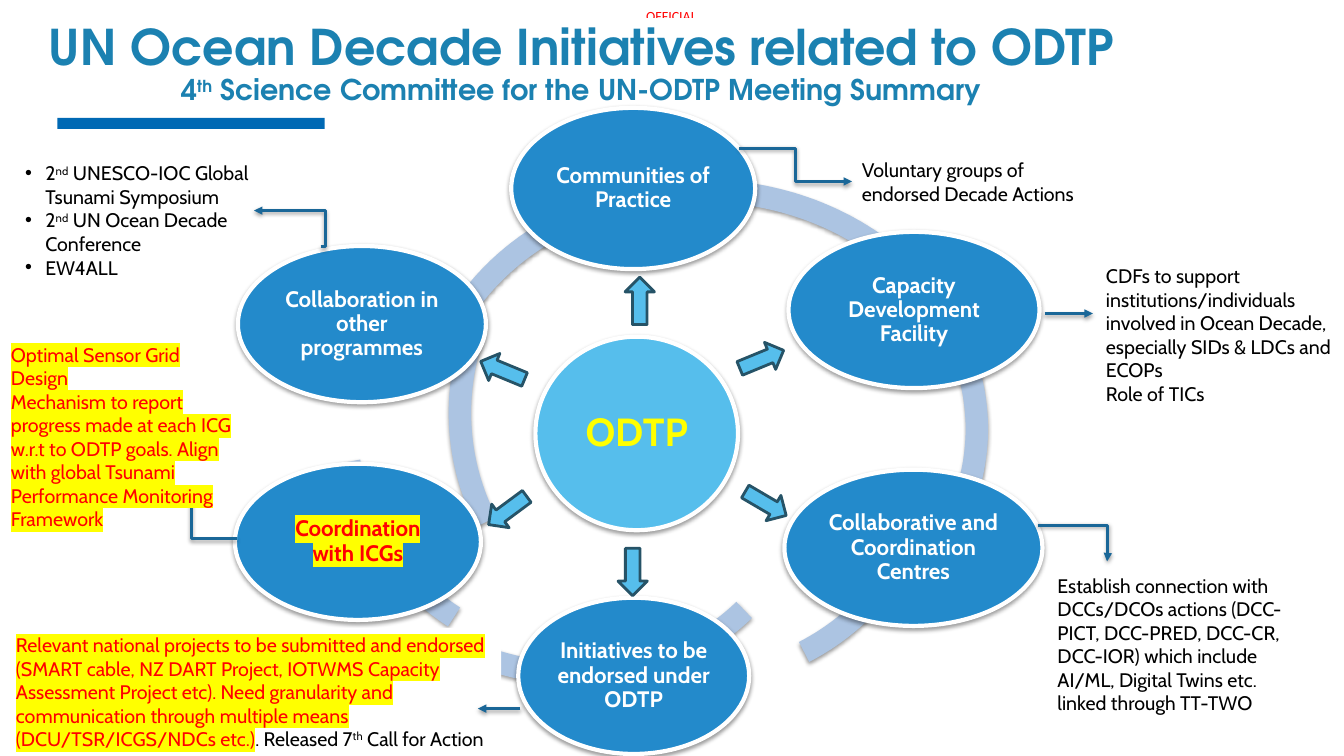
from lxml import etree
from pptx import Presentation
from pptx.dml.color import RGBColor
from pptx.enum.shapes import MSO_CONNECTOR, MSO_SHAPE
from pptx.enum.text import MSO_ANCHOR, MSO_AUTO_SIZE, PP_ALIGN
from pptx.oxml.ns import qn
from pptx.util import Inches, Pt

RECT, OVAL = MSO_SHAPE.RECTANGLE, MSO_SHAPE.OVAL
ARC, DOWN_ARROW = MSO_SHAPE.BLOCK_ARC, MSO_SHAPE.DOWN_ARROW
STRAIGHT, ELBOW = MSO_CONNECTOR.STRAIGHT, MSO_CONNECTOR.ELBOW
TOP, MIDDLE = MSO_ANCHOR.TOP, MSO_ANCHOR.MIDDLE
LEFT, CENTER = PP_ALIGN.LEFT, PP_ALIGN.CENTER
NO_FIT = MSO_AUTO_SIZE.NONE

BODY = dict(name="Cabin", size=Pt(14), bold=False, color="000000")
MARKED = dict(BODY, color="FF0000", highlight="FFFF00")
NODE = dict(BODY, size=Pt(16), bold=True, color="FFFFFF")
NODE_MARKED = dict(NODE, color="FF0000", highlight="FFFF00")
HUB = dict(NODE, size=Pt(28), color="FFFF00")
TITLE = dict(name="TeX Gyre Adventor", size=Pt(35.1), bold=True, color="1B81B1")
SUBTITLE = dict(TITLE, size=Pt(20.4))
OFFICIAL = dict(name="Calibri", size=Pt(10), color="FF0000")


def rgb(value):
    return RGBColor.from_string(value)


def sub(parent, tag, **attrs):
    return etree.SubElement(parent, qn(tag), attrs)


class Deck:
    """Draws styled elements on the current slide."""

    def __init__(self):
        self.prs = Presentation()
        self.prs.slide_width, self.prs.slide_height = Inches(13.33), Inches(7.5)
        self.s = self.prs.slides.add_slide(self.prs.slide_layouts[1])

    def place(self, sp, box):
        for key, value in zip(("left", "top", "width", "height"), box):
            setattr(sp, key, Inches(value))

    def add_run(self, p, text, style, raised):
        r = p.add_run()
        r.text = text
        for key, value in style.items():
            if key == "color":
                r.font.color.rgb = rgb(value)
            elif key != "highlight":
                setattr(r.font, key, value)
        rPr = r._r.get_or_add_rPr()
        if raised:
            rPr.set("baseline", "30000")
        if "highlight" in style:
            mark = sub(rPr, "a:highlight")
            sub(mark, "a:srgbClr", val=style["highlight"])
            rPr.find(qn("a:solidFill")).addnext(mark)

    def fill_text(self, sp, paras, align=LEFT, anchor=TOP, spacing=1.0, inset=(0.1, 0.05)):
        """Fill a shape; each paragraph lists (text, style), with ^ around superscripts."""
        tf = sp.text_frame
        x, y = map(Inches, inset)
        frame = dict(word_wrap=True, auto_size=NO_FIT, vertical_anchor=anchor,
                     margin_left=x, margin_right=x, margin_top=y, margin_bottom=y)
        for key, value in frame.items():
            setattr(tf, key, value)
        layout = dict(alignment=align, line_spacing=spacing, space_before=Pt(0), space_after=Pt(0))
        for i, runs in enumerate(paras):
            p = tf.add_paragraph() if i else tf.paragraphs[0]
            for key, value in layout.items():
                setattr(p, key, value)
            for text, style in runs:
                for j, part in enumerate(text.split("^")):
                    self.add_run(p, part, style, j % 2 == 1)

    def title(self, box, paras):
        sp = self.s.shapes.title
        self.s.shapes._spTree.append(sp._element)
        self.place(sp, box)
        sp.fill.solid()
        sp.fill.fore_color.rgb = rgb("FFFFFF")
        self.fill_text(sp, paras, CENTER, MIDDLE, 0.9, (0.05, 0.05))

    def bullets(self, box, items):
        sp = self.s.placeholders[1]
        self.place(sp, box)
        self.fill_text(sp, [[(item, BODY)] for item in items])
        for p in sp.text_frame.paragraphs:
            pPr = p._p.get_or_add_pPr()
            pPr.set("marL", str(Inches(0.2)))
            pPr.set("indent", str(-Inches(0.2)))
            sub(pPr, "a:buFont", typeface="Arial")
            sub(pPr, "a:buChar", char="•")

    def text(self, box, paras, **layout):
        sp = self.s.shapes.add_textbox(*map(Inches, box))
        self.fill_text(sp, paras, **layout)

    def shape(self, kind, box, fill, line=None, width=2, shadow=False, rotation=0):
        sp = self.s.shapes.add_shape(kind, *map(Inches, box))
        sp.rotation = rotation
        sp.fill.solid()
        sp.fill.fore_color.rgb = rgb(fill)
        if line:
            sp.line.color.rgb = rgb(line)
            sp.line.width = Pt(width)
        else:
            sp.line.fill.background()
        sp.shadow.inherit = False
        if shadow:
            self.shadow(sp._element.spPr.find(qn("a:effectLst")))
        return sp

    def shadow(self, effects):
        shade = sub(effects, "a:outerShdw", blurRad=str(Pt(3.1)), dist=str(Pt(1.6)),
                    dir="5400000", rotWithShape="0")
        sub(sub(shade, "a:srgbClr", val="000000"), "a:alpha", val="38000")

    def arc(self, box, start, end):
        sp = self.shape(ARC, box, "ACC4E2", shadow=True)
        for i, value in enumerate((start * 0.6, end * 0.6, 0.045)):
            sp.adjustments[i] = value

    def oval(self, box, text, style=NODE, fill="238ACB"):
        sp = self.shape(OVAL, box, fill, "FFFFFF", 3, shadow=True)
        self.fill_text(sp, [[(text, style)]], CENTER, MIDDLE, 0.9, (0.02, 0.02))

    def arrow(self, ends, bend=None):
        kind = STRAIGHT if bend is None else ELBOW
        c = self.s.shapes.add_connector(kind, *map(Inches, ends))
        c.line.color.rgb = rgb("1A6798")
        c.line.width = Pt(2)
        spPr = c._element.spPr
        sub(spPr.find(qn("a:ln")), "a:tailEnd", type="triangle")
        self.shadow(sub(spPr, "a:effectLst"))
        if bend is not None:
            guides = spPr.find(qn("a:prstGeom")).find(qn("a:avLst"))
            sub(guides, "a:gd", name="adj1", fmla=f"val {round(bend * 100000)}")


def main():
    d = Deck()
    d.shape(RECT, (0.57, 1.17, 2.65, 0.11), "0069B4")
    d.text((6.41, 0.07, 0.53, 0.17), [[("OFFICIAL", OFFICIAL)]], inset=(0, 0))
    d.title((0.18, 0.18, 11.17, 0.93), [
        [("UN Ocean Decade Initiatives related to ODTP", TITLE)],
        [("4^th^ Science Committee for the UN-ODTP Meeting Summary", SUBTITLE)]])

    for box, start, end in [
            ((3.31, 1.66, 4.95, 4.95), 122.84, 169.14),
            ((2.97, 1.86, 5.74, 4.95), 92.74, 124.44),
            ((3.27, 1.87, 4.95, 4.95), 46.22, 92.93),
            ((4.42, 1.89, 4.95, 4.95), 15.84, 62.81),
            ((4.12, 1.78, 5.68, 4.95), 198.51, 17.61),
            ((4.45, 1.62, 4.95, 4.95), 152.78, 199.4)]:
        d.arc(box, start, end)

    d.oval((5.31, 3.34, 2.01, 1.92), "ODTP", HUB, "56BEEC")
    for box, text, style in [
            ((5.07, 1.07, 2.42, 1.6), "Communities of Practice", NODE),
            ((7.82, 2.3, 2.49, 1.55), "Capacity Development Facility", NODE),
            ((7.78, 4.66, 2.56, 1.55), "Collaborative and Coordination Centres", NODE),
            ((5.14, 5.93, 2.29, 1.55), "Initiatives to be endorsed under ODTP", NODE),
            ((2.33, 4.6, 2.44, 1.55), "Coordination with ICGs", NODE_MARKED),
            ((2.36, 2.44, 2.46, 1.55), "Collaboration in other programmes", NODE)]:
        d.oval(box, text, style)

    d.shape(RECT, (0.06, 6.23, 4.91, 1.28), "FFFFFF")
    for ends, bend in [
            ((10.36, 3.11, 10.84, 3.11), None),
            ((5.16, 7.03, 4.74, 7.03), None),
            ((2.35, 5.34, 1.45, 4.88), 0.5),
            ((10.29, 5.21, 10.98, 5.57), 1.01),
            ((7.33, 1.47, 8.45, 1.8), 0.5),
            ((3.18, 2.45, 2.52, 2.09), -0.07)]:
        d.arrow(ends, bend)

    d.bullets((0.15, 1.55, 2.59, 1.28), [
        "2^nd^ UNESCO-IOC Global Tsunami Symposium",
        "2^nd^ UN Ocean Decade Conference", "EW4ALL"])
    for box, paras in [
            ((8.45, 1.52, 2.45, 0.57), [[("Voluntary groups of endorsed Decade Actions", BODY)]]),
            ((10.87, 2.57, 2.45, 1.51), [
                [("CDFs to support institutions/individuals involved in Ocean Decade, "
                  "especially SIDs & LDCs and ECOPs", BODY)],
                [("Role of TICs", BODY)]]),
            ((10.39, 5.64, 2.57, 1.51), [
                [("Establish connection with DCCs/DCOs actions (DCC-PICT, DCC-PRED, DCC-CR, "
                  "DCC-IOR) which include AI/ML, Digital Twins etc. linked through TT-TWO", BODY)]]),
            ((0.06, 6.23, 4.91, 1.28), [
                [("Relevant national projects to be submitted and endorsed (SMART cable, NZ DART "
                  "Project, IOTWMS Capacity Assessment Project etc). Need granularity and "
                  "communication through multiple means (DCU/TSR/ICGS/NDCs etc.)", MARKED),
                 (". Released 7^th^ Call for Action", BODY)]]),
            ((0.01, 3.35, 2.45, 1.75), [
                [("Optimal Sensor Grid Design", MARKED)],
                [("Mechanism to report progress made at each ICG w.r.t to ODTP goals. Align with "
                  "global Tsunami Performance Monitoring Framework", MARKED)]])]:
        d.text(box, paras)

    for left, top, rotation in [(7.41, 3.33, 247.6), (7.45, 4.76, 300.4), (6.2, 2.75, 180),
                                (4.84, 3.44, 112.5), (4.89, 4.83, 53.5), (6.13, 5.44, 0)]:
        d.shape(DOWN_ARROW, (left, top, 0.29, 0.47), "56BEEC", "265367", rotation=rotation)

    d.prs.save("out.pptx")


if __name__ == "__main__":
    main()
